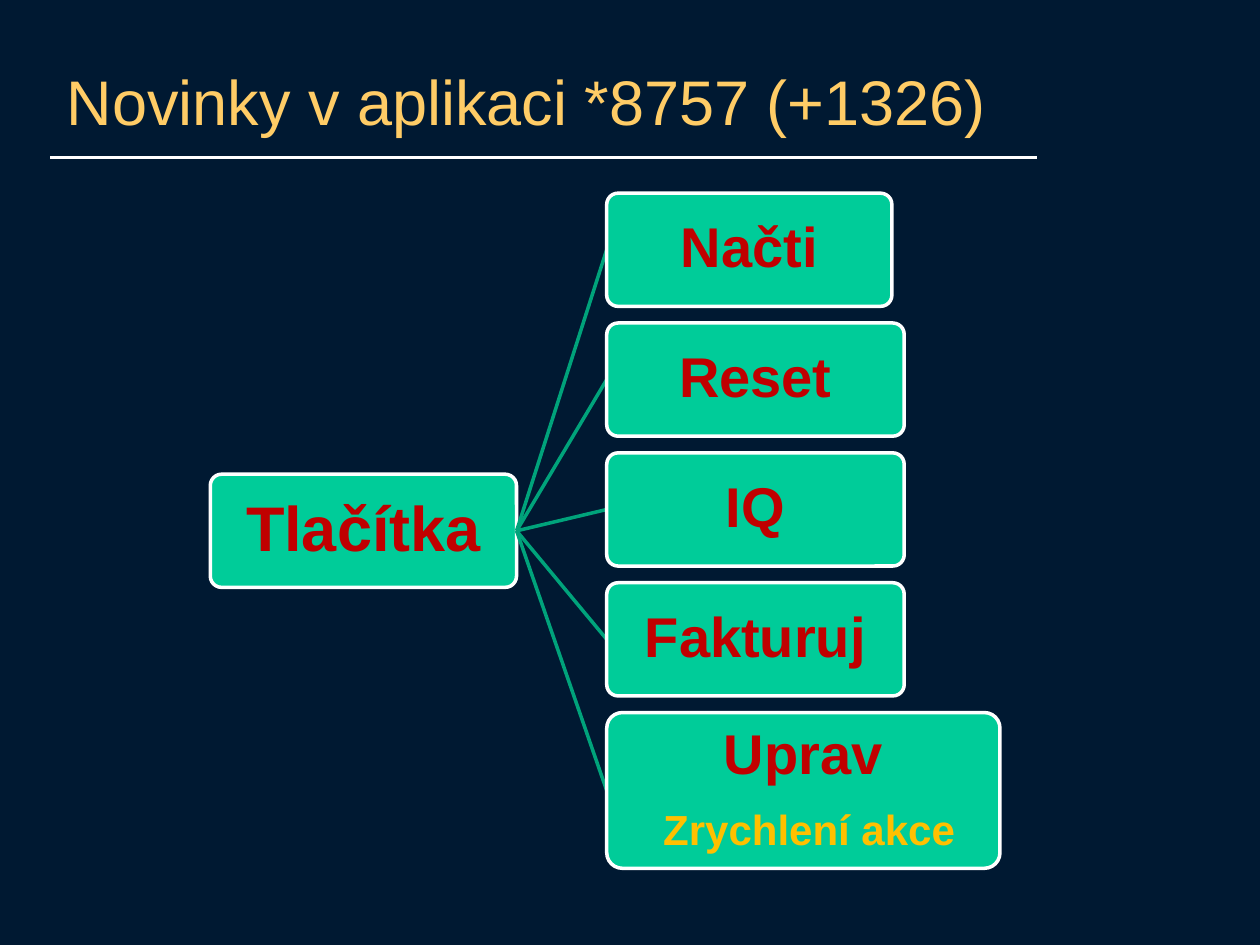
from lxml import etree
from pptx import Presentation
from pptx.dml.color import RGBColor
from pptx.enum import shapes, text
from pptx.oxml import ns
from pptx.util import Pt


def color(value):
    return RGBColor.from_string(value)


def add_button(left, top, width, height, inset, lines):
    button = slide.shapes.add_shape(
        shapes.MSO_SHAPE.ROUNDED_RECTANGLE, Pt(left), Pt(top), Pt(width), Pt(height))
    button.adjustments[0] = 0.1
    button.shadow.inherit = False
    button.fill.solid()
    button.fill.fore_color.rgb = color("00CC99")
    button.line.color.rgb = color("FFFFFF")
    button.line.width = Pt(2)
    frame = button.text_frame
    frame.word_wrap = True
    frame.vertical_anchor = text.MSO_ANCHOR.MIDDLE
    frame.margin_left = frame.margin_right = Pt(inset)
    frame.margin_top = frame.margin_bottom = Pt(inset)
    for index, (wording, size, ink) in enumerate(lines):
        paragraph = frame.add_paragraph() if index else frame.paragraphs[0]
        paragraph.alignment = text.PP_ALIGN.CENTER
        paragraph.line_spacing = 0.9
        if index:
            paragraph.space_before = Pt(13)
        run = paragraph.add_run()
        run.text = wording
        run.font.name = "Arial"
        run.font.size = Pt(size)
        run.font.bold = True
        run.font.color.rgb = color(ink)


def add_line(start, end, ink, weight):
    line = slide.shapes.add_connector(
        shapes.MSO_CONNECTOR.STRAIGHT, *(Pt(value) for value in start + end))
    line.line.color.rgb = color(ink)
    line.line.width = Pt(weight)
    etree.SubElement(line._element.spPr, ns.qn("a:effectLst"))


deck = Presentation()
deck.slide_width, deck.slide_height = Pt(720), Pt(540)
slide = deck.slides.add_slide(deck.slide_layouts[6])
slide.background.fill.solid()
slide.background.fill.fore_color.rgb = color("001932")

add_line((28.8, 90), (592.5, 90), "FFFFFF", 1.5)

title = slide.shapes.add_textbox(Pt(31), Pt(30.2), Pt(564), Pt(54)).text_frame
title.word_wrap = True
title.vertical_anchor = text.MSO_ANCHOR.MIDDLE
heading = title.paragraphs[0].add_run()
heading.text = "Novinky v aplikaci *8757 (+1326)"
heading.font.name = "Arial"
heading.font.size = Pt(36)
heading.font.color.rgb = color("FFCC66")

row_height = 64.7
add_button(120.2, 271, 175, row_height, 2, [("Tlačítka", 36, "C00000")])
hub = (295.2, 271 + row_height / 2)

actions = [
    ("Načti", 163, row_height, []),
    ("Reset", 170, row_height, []),
    ("IQ", 170, row_height, []),
    ("Fakturuj", 170, row_height, []),
    ("Uprav", 224.7, 89, [(" Zrychlení akce", 24, "FFC000")]),
]
for row, (action, width, height, details) in enumerate(actions):
    left, top = 346.7, 110.4 + row * 74.2
    add_line(hub, (left, top + height / 2), "00A37B", 2)
    add_button(left, top, width, height, 1.5, [(action, 32, "C00000")] + details)

deck.save("out.pptx")
